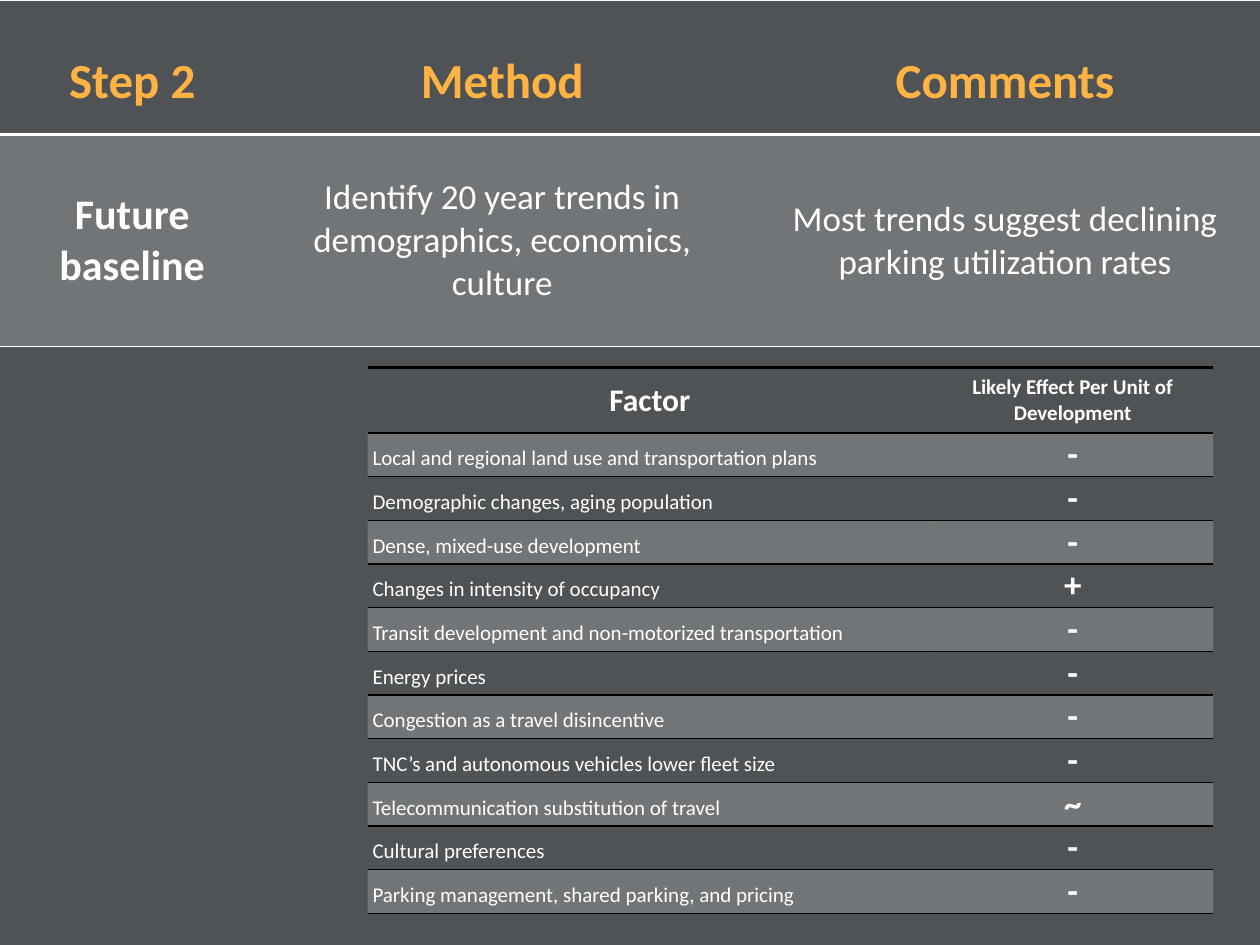
from lxml import etree
from pptx import Presentation
from pptx.dml.color import RGBColor
from pptx.enum.text import MSO_ANCHOR, PP_ALIGN
from pptx.oxml.ns import qn
from pptx.util import Cm, Pt

LEFT, CENTER = PP_ALIGN.LEFT, PP_ALIGN.CENTER
TOP, MIDDLE = MSO_ANCHOR.TOP, MSO_ANCHOR.MIDDLE
NO_STYLE = "{2D5ABB26-0587-4C30-8999-92F81FD0307C}"
BLANK_LAYOUT = 6

COLORS = {"background": "4F5355", "text": "FFFFFF", "heading": "FFB343",
          "band": "FFFFFF", "step_rule": "FFFFFF", "factor_rule": "000000"}
BAND_OPACITY = 20

STEP_COLUMNS = [5.33, 9.59, 10.68]
FACTOR_COLUMNS = [11.38, 5.67]
HEADING_HEIGHT = 1.32
FACTOR_HEIGHT = 0.88

FACTORS = [
    ("Local and regional land use and transportation plans", "-"),
    ("Demographic changes, aging population", "-"),
    ("Dense, mixed-use development", "-"),
    ("Changes in intensity of occupancy", "+"),
    ("Transit development and non-motorized transportation", "-"),
    ("Energy prices", "-"),
    ("Congestion as a travel disincentive", "-"),
    ("TNC’s and autonomous vehicles lower fleet size", "-"),
    ("Telecommunication substitution of travel", "~"),
    ("Cultural preferences", "-"),
    ("Parking management, shared parking, and pricing", "-"),
]

STEP_HEADING = {"size": 28, "bold": True, "color": "heading", "margins": (0.13, 0),
                "paragraph": {"line_spacing": 1.5, "space_after": Pt(6)}}
STEP_NAME = {"size": 24, "bold": True, "margins": (0.13, 0),
             "paragraph": {"space_after": Pt(6)}}
STEP_DETAIL = {"size": 20, "margins": (0.25, 0.25),
               "paragraph": {"space_after": Pt(6)}}
FACTOR_HEADING = {"size": 18, "bold": True}
EFFECT_HEADING = {"size": 12, "bold": True}
FACTOR = {"size": 12, "align": LEFT, "anchor": TOP, "margins": (0.1, 0),
          "paragraph": {"line_spacing": 1.5, "space_after": Pt(6)}}
EFFECT = {"size": 20, "bold": True, "margins": (0.1, 0)}


def rgb(name):
    return RGBColor.from_string(COLORS[name])


def add_plain_table(slide, left, top, widths, heights):
    frame = slide.shapes.add_table(len(heights), len(widths), Cm(left), Cm(top),
                                   Cm(sum(widths)), Cm(sum(heights)))
    table = frame.table
    table.first_row = table.horz_banding = False
    table._tbl.tblPr.find(qn("a:tableStyleId")).text = NO_STYLE
    for column, width in zip(table.columns, widths):
        column.width = Cm(width)
    for row, height in zip(table.rows, heights):
        row.height = Cm(height)
    return table


def write_cell(cell, text, style):
    across, down = style.get("margins", (0, 0))
    cell_format = {"margin_left": Cm(across), "margin_right": Cm(across),
                   "margin_top": Cm(down), "margin_bottom": Cm(down),
                   "vertical_anchor": style.get("anchor", MIDDLE)}
    for name, value in cell_format.items():
        setattr(cell, name, value)
    cell.text = text
    paragraph = cell.text_frame.paragraphs[0]
    paragraph_format = {"alignment": style.get("align", CENTER),
                        **style.get("paragraph", {})}
    for name, value in paragraph_format.items():
        setattr(paragraph, name, value)
    font = paragraph.runs[0].font
    font_format = {"name": "Calibri", "size": Pt(style["size"]),
                   "bold": style.get("bold", False)}
    for name, value in font_format.items():
        setattr(font, name, value)
    font.color.rgb = rgb(style.get("color", "text"))


def fill_cell(cell, banded):
    if not banded:
        cell.fill.background()
        return
    cell.fill.solid()
    cell.fill.fore_color.rgb = rgb("band")
    color = cell._tc.tcPr.find(".//" + qn("a:srgbClr"))
    etree.SubElement(color, qn("a:alpha"), val=str(BAND_OPACITY * 1000))


def rule_cell(cell, color, top_width, bottom_width):
    for position, (side, width) in enumerate((("a:lnT", top_width), ("a:lnB", bottom_width))):
        line = etree.Element(qn(side), w=str(Pt(width)))
        fill = etree.SubElement(line, qn("a:solidFill"))
        etree.SubElement(fill, qn("a:srgbClr"), val=COLORS[color])
        cell._tc.tcPr.insert(position, line)


def fill_row(table, index, texts, styles, rule, banded=False, top_width=1):
    for column, (text, style) in enumerate(zip(texts, styles)):
        cell = table.cell(index, column)
        write_cell(cell, text, style)
        fill_cell(cell, banded)
        rule_cell(cell, rule, top_width, 1)


def add_step_row(slide, top, height, texts, styles, banded=False):
    table = add_plain_table(slide, 0, top, STEP_COLUMNS, [height])
    fill_row(table, 0, texts, styles, "step_rule", banded)


def add_factor_table(slide):
    heights = [HEADING_HEIGHT] + [FACTOR_HEIGHT] * len(FACTORS)
    table = add_plain_table(slide, 7.41, 7.41, FACTOR_COLUMNS, heights)
    fill_row(table, 0, ("Factor", "Likely Effect Per Unit of Development"),
             (FACTOR_HEADING, EFFECT_HEADING), "factor_rule", top_width=1.5)
    for index, factor in enumerate(FACTORS, 1):
        fill_row(table, index, factor, (FACTOR, EFFECT), "factor_rule",
                 banded=index % 2 == 1)


def main():
    deck = Presentation()
    deck.slide_width, deck.slide_height = Cm(25.4), Cm(19.05)
    slide = deck.slides.add_slide(deck.slide_layouts[BLANK_LAYOUT])
    slide.background.fill.solid()
    slide.background.fill.fore_color.rgb = rgb("background")
    add_step_row(slide, 2.72, 4.27,
                 ("Future baseline",
                  "Identify 20 year trends in demographics, economics, culture",
                  "Most trends suggest declining parking utilization rates"),
                 (STEP_NAME, STEP_DETAIL, STEP_DETAIL), banded=True)
    add_step_row(slide, 0, 2.69, ("Step 2", "Method", "Comments"), [STEP_HEADING] * 3)
    add_factor_table(slide)
    deck.save("out.pptx")


if __name__ == "__main__":
    main()
